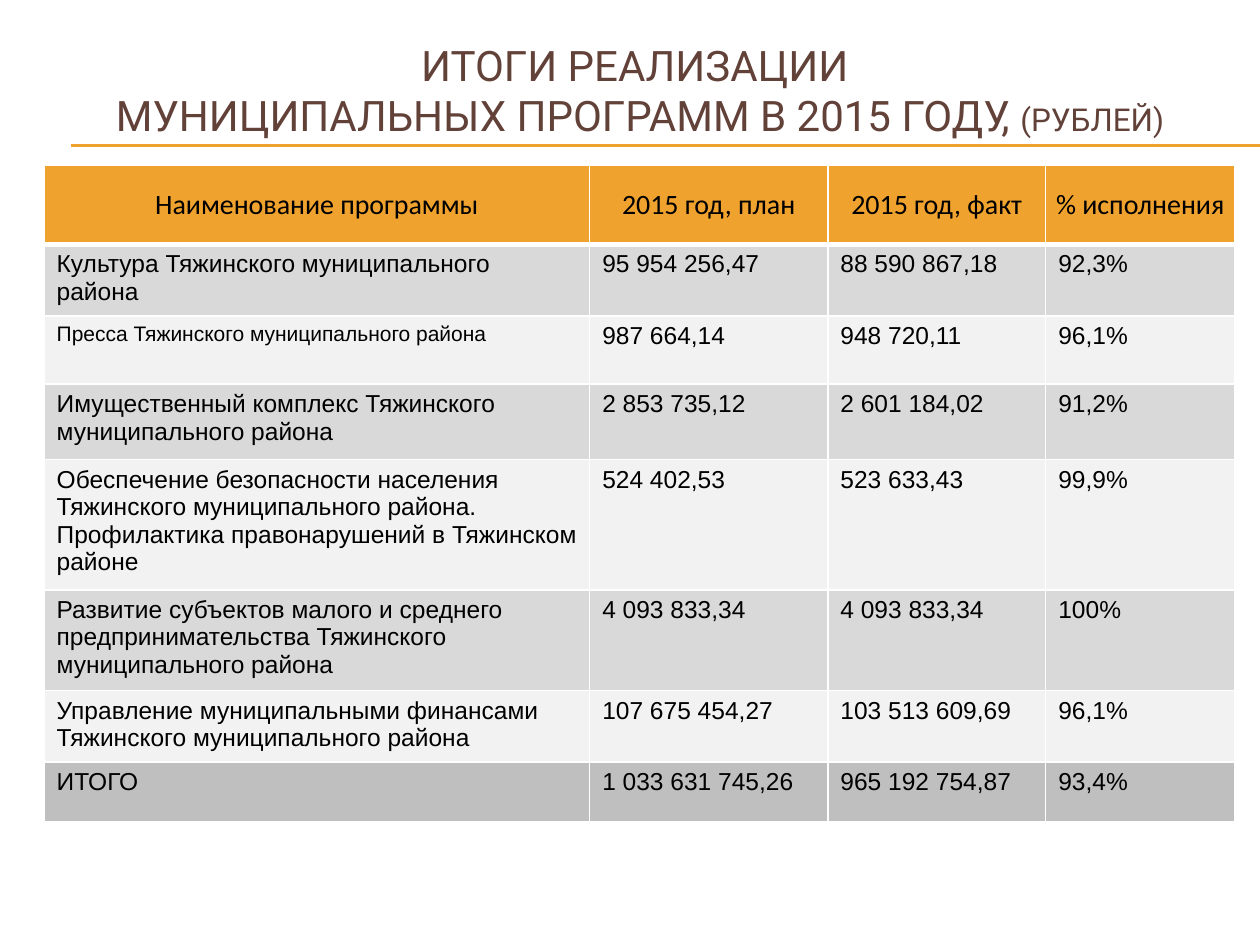
"""Build the slide with the results of municipal programmes in 2015."""
from lxml import etree
from pptx import Presentation
from pptx import util as u
from pptx.dml.color import RGBColor
from pptx.enum import shapes, text
from pptx.oxml.ns import qn


def color(value):
    return RGBColor.from_string(value)


def add_run(paragraph, content, font, size, fill):
    run = paragraph.add_run()
    run.text = content
    values = {"name": font, "size": u.Pt(size), "bold": False}
    for name, value in values.items():
        setattr(run.font, name, value)
    run.font.color.rgb = color(fill)


presentation = Presentation()
presentation.slide_width = u.Inches(10)
presentation.slide_height = u.Inches(7.5)
slide = presentation.slides.add_slide(presentation.slide_layouts[6])

for top in (1.15, 1.16):
    rule = slide.shapes.add_connector(
        shapes.MSO_CONNECTOR.STRAIGHT,
        u.Inches(0.56), u.Inches(top), u.Inches(10), u.Inches(top))
    rule.line.color.rgb = color("F0A22E")
    rule.line.width = u.Pt(0.75)
    etree.SubElement(rule.element.spPr, qn("a:effectLst"))

title = slide.shapes.add_textbox(
    u.Inches(0.33), u.Inches(0), u.Inches(9.5), u.Inches(1.42))
frame = title.text_frame
frame.word_wrap = True
frame.vertical_anchor = text.MSO_ANCHOR.MIDDLE
paragraph = frame.paragraphs[0]
paragraph.alignment = text.PP_ALIGN.CENTER
add_run(paragraph, "ИТОГИ РЕАЛИЗАЦИИ ", "Roboto", 24, "624139")
paragraph.add_line_break()
add_run(paragraph, "МУНИЦИПАЛЬНЫХ ПРОГРАММ В 2015 ГОДУ, ", "Roboto", 24, "624139")
add_run(paragraph, "(РУБЛЕЙ)", "Roboto", 18, "624139")

rows = [
    ("Наименование программы", "2015 год, план", "2015 год, факт", "% исполнения"),
    ("Культура Тяжинского муниципального района",
     "95 954 256,47", "88 590 867,18", "92,3%"),
    ("Пресса Тяжинского муниципального района",
     "987 664,14", "948 720,11", "96,1%"),
    ("Имущественный комплекс Тяжинского муниципального района",
     "2 853 735,12", "2 601 184,02", "91,2%"),
    ("Обеспечение безопасности населения Тяжинского муниципального района. "
     "Профилактика правонарушений в Тяжинском районе",
     "524 402,53", "523 633,43", "99,9%"),
    ("Развитие субъектов малого и среднего предпринимательства "
     "Тяжинского муниципального района",
     "4 093 833,34", "4 093 833,34", "100%"),
    ("Управление муниципальными финансами Тяжинского муниципального района",
     "107 675 454,27", "103 513 609,69", "96,1%"),
    ("ИТОГО", "1 033 631 745,26", "965 192 754,87", "93,4%"),
]
widths = [4.33, 1.89, 1.73, 1.5]
heights = [0.63, 0.55, 0.54, 0.6, 0.47, 0.47, 0.47, 0.47]
fills = ["F0A22E"] + ["D9D9D9", "F2F2F2"] * 3 + ["BFBFBF"]
header_format = {
    "vertical_anchor": text.MSO_ANCHOR.MIDDLE,
    "margin_left": u.Inches(0.01),
    "margin_top": u.Inches(0.01),
    "margin_right": u.Inches(0.01),
    "margin_bottom": u.Inches(0),
}

table = slide.shapes.add_table(
    len(rows), len(widths), u.Inches(0.35), u.Inches(1.31),
    u.Inches(sum(widths)), u.Inches(sum(heights))).table
for column, width in zip(table.columns, widths):
    column.width = u.Inches(width)

for index, row in enumerate(rows):
    table.rows[index].height = u.Inches(heights[index])
    for position, content in enumerate(row):
        cell = table.cell(index, position)
        paragraph = cell.text_frame.paragraphs[0]
        if index == 0:
            for name, value in header_format.items():
                setattr(cell, name, value)
            paragraph.alignment = text.PP_ALIGN.CENTER
            add_run(paragraph, content, "Calibri", 16, "000000")
        else:
            size = 12 if (index, position) == (2, 0) else 14
            add_run(paragraph, content, "Arial", size, "000000")
        properties = cell._tc.get_or_add_tcPr()
        for side in "LRTB":
            thick = (index, side) in ((0, "B"), (1, "T"))
            border = etree.SubElement(
                properties, qn(f"a:ln{side}"), w=str(u.Pt(3 if thick else 1)))
            solid = etree.SubElement(border, qn("a:solidFill"))
            etree.SubElement(solid, qn("a:srgbClr"), val="FFFFFF")
        cell.fill.solid()
        cell.fill.fore_color.rgb = color(fills[index])

presentation.save("out.pptx")
